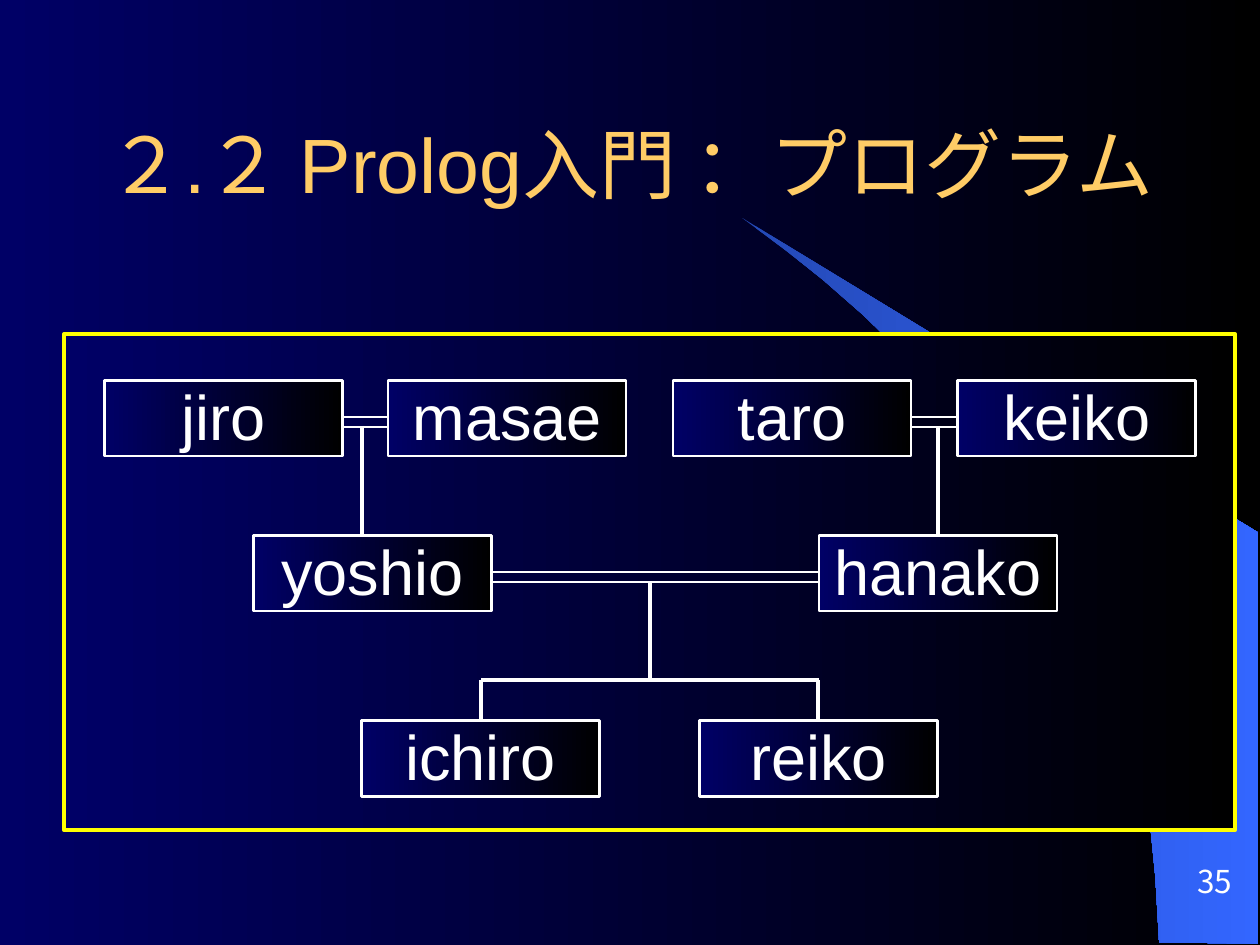
from dataclasses import dataclass
from lxml.etree import SubElement
from pptx import Presentation
from pptx.dml.color import RGBColor
from pptx.enum.shapes import MSO_CONNECTOR, MSO_SHAPE
from pptx.enum.text import MSO_ANCHOR, MSO_AUTO_SIZE, PP_ALIGN
from pptx.oxml.ns import qn
from pptx.util import Inches, Pt


@dataclass(frozen=True)
class Theme:
    night: RGBColor = RGBColor.from_string("000066")
    black: RGBColor = RGBColor.from_string("000000")
    swoosh_start: RGBColor = RGBColor.from_string("2449B6")
    swoosh_end: RGBColor = RGBColor.from_string("3366FF")
    frame: RGBColor = RGBColor.from_string("FFFF00")
    title: RGBColor = RGBColor.from_string("FFCC66")
    white: RGBColor = RGBColor.from_string("FFFFFF")
    font: str = "Arial"
    number_font: str = "Noto Sans CJK JP"
    title_size: Pt = Pt(44)
    name_size: Pt = Pt(36)
    number_size: Pt = Pt(18)
    thin: Pt = Pt(0.75)
    border: Pt = Pt(1.5)
    thick: Pt = Pt(2.25)


theme = Theme()


def paint(fill, start, end):
    fill.gradient()
    fill.gradient_angle = 0
    for stop, color in zip(fill.gradient_stops, (start, end)):
        stop.color.rgb = color


def add_line(x1, y1, x2, y2, width):
    line = slide.shapes.add_connector(MSO_CONNECTOR.STRAIGHT, x1, y1, x2, y2)
    line.line.color.rgb = theme.white
    line.line.width = width
    SubElement(line._element.spPr, qn("a:effectLst"))
    return line


presentation = Presentation()
presentation.slide_width, presentation.slide_height = Inches(10), Inches(7.5)
slide = presentation.slides.add_slide(presentation.slide_layouts[5])
paint(slide.background.fill, theme.night, theme.black)

swoosh_points = [
    (9.99, 7.49), (9.99, 4.23), (5.89, 1.73), (6.24, 1.99), (6.53, 2.22), (6.85, 2.5),
    (7.16, 2.8), (7.62, 3.3), (8.03, 3.84), (8.32, 4.31), (8.58, 4.79), (8.78, 5.28),
    (8.93, 5.72), (9.03, 6.09), (9.13, 6.56), (9.17, 6.96),
]
builder = slide.shapes.build_freeform(Inches(9.2), Inches(7.48))
builder.add_line_segments([(Inches(x), Inches(y)) for x, y in swoosh_points])
swoosh = builder.convert_to_shape()
swoosh.shadow.inherit = False
paint(swoosh.fill, theme.swoosh_start, theme.swoosh_end)
swoosh.line.fill.background()

frame = slide.shapes.add_shape(
    MSO_SHAPE.RECTANGLE, Inches(0.51), Inches(2.65), Inches(9.29), Inches(3.94))
frame.shadow.inherit = False
paint(frame.fill, theme.night, theme.black)
frame.line.color.rgb = theme.frame
frame.line.width = theme.thick

title = slide.shapes.title
title.left, title.top = Inches(0.75), Inches(0.67)
title.width, title.height = Inches(8.84), Inches(1.25)
title.text_frame.text = "２.２ Prolog入門 ：プログラム"
title.text_frame.auto_size = MSO_AUTO_SIZE.NONE
title.text_frame.vertical_anchor = MSO_ANCHOR.MIDDLE
paragraph = title.text_frame.paragraphs[0]
paragraph.alignment = PP_ALIGN.LEFT
font = paragraph.runs[0].font
font.name, font.size, font.color.rgb = theme.font, theme.title_size, theme.title

generations = [
    (3.02, [("jiro", 0.83), ("masae", 3.08), ("taro", 5.34), ("keiko", 7.6)]),
    (4.25, [("yoshio", 2.01), ("hanako", 6.5)]),
    (5.72, [("ichiro", 2.87), ("reiko", 5.55)]),
]
people = {}
for top, members in generations:
    for name, left in members:
        box = slide.shapes.add_shape(
            MSO_SHAPE.RECTANGLE, Inches(left), Inches(top), Inches(1.89), Inches(0.6))
        box.shadow.inherit = False
        paint(box.fill, theme.night, theme.black)
        box.line.color.rgb = theme.white
        box.line.width = theme.border
        text_frame = box.text_frame
        text_frame.text = name
        text_frame.vertical_anchor = MSO_ANCHOR.TOP
        text_frame.margin_top = Inches(0.09)
        paragraph = text_frame.paragraphs[0]
        paragraph.alignment = PP_ALIGN.CENTER
        paragraph.line_spacing = 0.8
        font = paragraph.runs[0].font
        font.name, font.size, font.color.rgb = theme.font, theme.name_size, theme.white
        people[name] = box

for husband, wife in [("jiro", "masae"), ("taro", "keiko"), ("yoshio", "hanako")]:
    start = people[husband].left + people[husband].width
    for offset in (0.29, 0.37):
        y = people[husband].top + Inches(offset)
        add_line(start, y, people[wife].left, y, theme.thin)

yoshio_x = Inches(2.87)
add_line(yoshio_x, Inches(3.38), yoshio_x, people["yoshio"].top, theme.thick)

branch_y = Inches(5.4)
for child, start_y in [("hanako", Inches(3.38)), ("ichiro", branch_y), ("reiko", branch_y)]:
    box = people[child]
    x = box.left + box.width // 2
    line = add_line(x, start_y, x, box.top, theme.thick)
    line.end_connect(box, 0)

couple_x = Inches(5.16)
add_line(couple_x, Inches(4.62), couple_x, branch_y, theme.thick)
add_line(Inches(3.82), branch_y, Inches(6.5), branch_y, theme.thick)

number = slide.shapes.add_textbox(Inches(8.86), Inches(6.72), Inches(1.02), Inches(0.42))
text_frame = number.text_frame
text_frame.text = "35"
text_frame.word_wrap = True
text_frame.vertical_anchor = MSO_ANCHOR.BOTTOM
text_frame.margin_top = text_frame.margin_bottom = 0
paragraph = text_frame.paragraphs[0]
paragraph.alignment = PP_ALIGN.RIGHT
font = paragraph.runs[0].font
font.name, font.size, font.color.rgb = theme.number_font, theme.number_size, theme.white

presentation.save("out.pptx")
